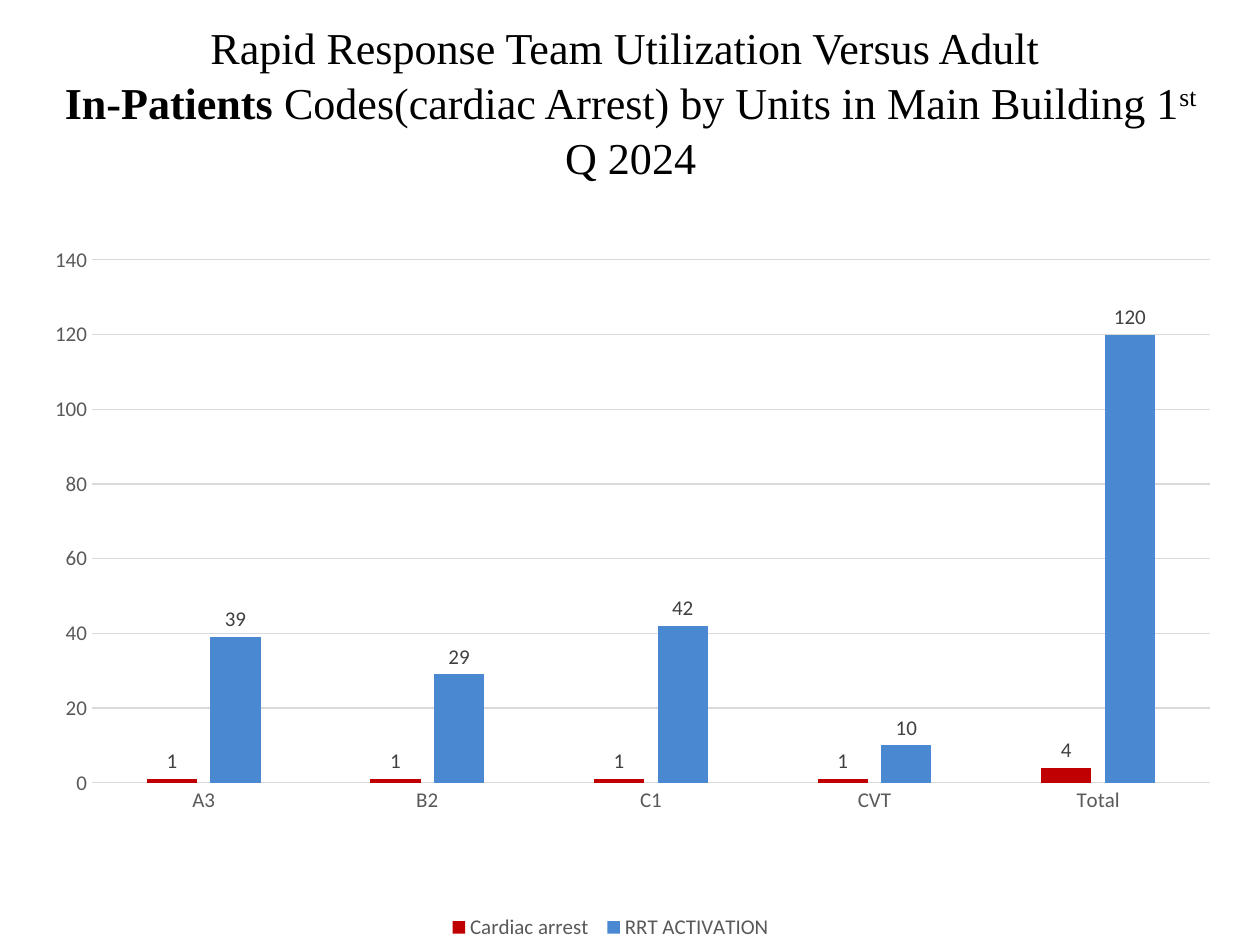
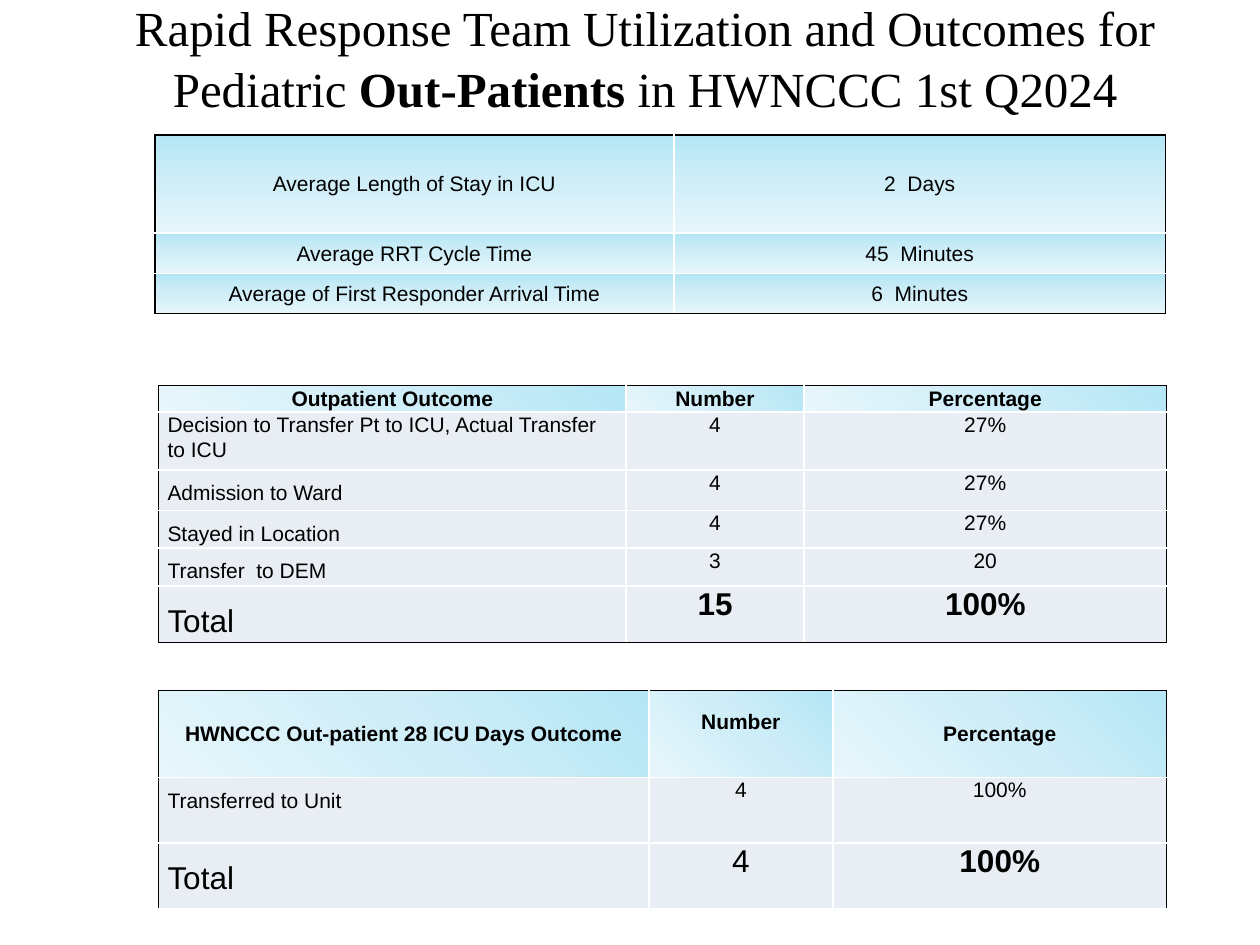
from lxml import etree
from pptx import Presentation
from pptx import util as u
from pptx.chart import data as chart_data
from pptx.dml.color import RGBColor
from pptx.enum import chart as ch
from pptx.enum import text as t
from pptx.oxml import ns

WIDTH, HEIGHT = u.Inches(10), u.Inches(7.5)
COLUMN, ROW = WIDTH / 100, HEIGHT / 75
BLACK, WHITE, PALE = "000000", "FFFFFF", "E9EDF4"
AXIS_TEXT, LABEL_TEXT, GRID_LINE = "595959", "404040", "D9D9D9"
ARREST_RED, ACTIVATION_BLUE = "C00000", "4A88D2"
SKY_STOPS = ((0, "B5E6F5"), (50, "D0EEF8"), (100, "E8F6FB"))
TITLE_FONT, TABLE_FONT, CHART_FONT = "Times New Roman", "Arial", "Calibri"


def rgb(value):
    return RGBColor.from_string(value)


def place(box):
    left, top, width, height = box
    return [u.Emu(round(n)) for n in
            (left * COLUMN, top * ROW, width * COLUMN, height * ROW)]


def set_font(font, face, size, color, bold=False):
    font.name, font.size, font.bold = face, u.Pt(size), bold
    font.color.rgb = rgb(color)


def add_element(parent, tag, **attributes):
    return etree.SubElement(parent, ns.qn(tag), attributes)


def add_color(parent, color):
    add_element(add_element(parent, "a:solidFill"), "a:srgbClr", val=color)


def add_title(slide, box, size, runs):
    frame = slide.shapes.add_textbox(*place(box)).text_frame
    frame.word_wrap = True
    frame.vertical_anchor = t.MSO_ANCHOR.MIDDLE
    paragraph = frame.paragraphs[0]
    paragraph.alignment = t.PP_ALIGN.CENTER
    paragraph.line_spacing = 1.04
    for words, style in runs:
        run = paragraph.add_run()
        run.text = words
        set_font(run.font, TITLE_FONT, size, BLACK, style == "bold")
        if style == "superscript":
            run.font._element.set("baseline", "30000")
        if style == "break":
            paragraph.add_line_break()


def set_plot_area(chart, x, y, w, h):
    plot_area = chart._chartSpace.chart.plotArea
    for old in plot_area.findall(ns.qn("c:layout")):
        plot_area.remove(old)
    layout = etree.Element(ns.qn("c:layout"))
    plot_area.insert(0, layout)
    manual = add_element(layout, "c:manualLayout")
    settings = {"layoutTarget": "inner", "xMode": "edge", "yMode": "edge",
                "x": x, "y": y, "w": w, "h": h}
    for name, value in settings.items():
        add_element(manual, f"c:{name}", val=str(value))


def style_axis(axis, line):
    axis.major_tick_mark = axis.minor_tick_mark = ch.XL_TICK_MARK.NONE
    set_font(axis.tick_labels.font, CHART_FONT, 12, AXIS_TEXT)
    if line:
        axis.format.line.color.rgb = rgb(line)
        axis.format.line.width = u.Pt(0.75)
    else:
        axis.format.line.fill.background()


def add_units_chart(slide, box, units, measures):
    data = chart_data.CategoryChartData()
    data.categories = units
    for name, values, _ in measures:
        data.add_series(name, values)
    chart = slide.shapes.add_chart(
        ch.XL_CHART_TYPE.COLUMN_CLUSTERED, *place(box), data).chart
    set_font(chart.font, CHART_FONT, 10, BLACK)
    chart.has_title = False
    chart.has_legend = True
    chart.legend.position = ch.XL_LEGEND_POSITION.BOTTOM
    chart.legend.include_in_layout = False
    set_font(chart.legend.font, CHART_FONT, 12, AXIS_TEXT)

    style_axis(chart.category_axis, GRID_LINE)
    scale = chart.value_axis
    style_axis(scale, None)
    scale.minimum_scale, scale.maximum_scale, scale.major_unit = 0, 140, 20
    scale.has_major_gridlines = True
    scale.major_gridlines.format.line.color.rgb = rgb(GRID_LINE)
    scale.major_gridlines.format.line.width = u.Pt(0.75)

    plot = chart.plots[0]
    plot.gap_width, plot.overlap, plot.vary_by_categories = 219, -27, False
    for series, (_, _, color) in zip(plot.series, measures):
        series.format.fill.solid()
        series.format.fill.fore_color.rgb = rgb(color)
        labels = series.data_labels
        labels.show_value = True
        labels.position = ch.XL_LABEL_POSITION.OUTSIDE_END
        set_font(labels.font, CHART_FONT, 12, LABEL_TEXT)
    set_plot_area(chart, 0.075, 0.036, 0.912, 0.736)


def paint_cell(cell, edges, angle):
    properties = cell._tc.get_or_add_tcPr()
    for side in "LRTB":
        line = add_element(properties, f"a:ln{side}", w=str(u.Pt(1)))
        add_color(line, BLACK if side in edges else WHITE)
    if angle is None:
        add_color(properties, PALE)
        return
    gradient = add_element(properties, "a:gradFill", rotWithShape="1")
    stops = add_element(gradient, "a:gsLst")
    for share, color in SKY_STOPS:
        stop = add_element(stops, "a:gs", pos=str(share * 1000))
        add_element(stop, "a:srgbClr", val=color)
    add_element(gradient, "a:lin", ang=str(angle * 60000), scaled="0")


def write_cell(cell, words, size=12, bold=False, label_spacing=None, middle=False):
    is_label = label_spacing is not None
    cell.margin_left = cell.margin_right = u.Inches(0.07 if is_label else 0.01)
    cell.margin_top = u.Inches(0 if is_label else 0.01)
    cell.margin_bottom = 0
    cell.vertical_anchor = t.MSO_ANCHOR.MIDDLE if middle else t.MSO_ANCHOR.TOP
    paragraph = cell.text_frame.paragraphs[0]
    paragraph.alignment = t.PP_ALIGN.LEFT if is_label else t.PP_ALIGN.CENTER
    if is_label:
        paragraph.line_spacing = label_spacing
    run = paragraph.add_run()
    run.text = words
    set_font(run.font, TABLE_FONT, size, BLACK, bold)


def add_grid(slide, corner, widths, heights, closed=True):
    box = (*corner, sum(widths), sum(heights))
    table = slide.shapes.add_table(len(heights), len(widths), *place(box)).table
    table.first_row = table.horz_banding = False
    for column, width in zip(table.columns, widths):
        column.width = u.Emu(round(width * COLUMN))
    for row, height in zip(table.rows, heights):
        row.height = u.Emu(round(height * ROW))

    def edges(r, c):
        return "".join(side for side, outer in (
            ("L", c == 0), ("R", c == len(widths) - 1), ("T", r == 0),
            ("B", closed and r == len(heights) - 1)) if outer)

    return table, edges


def add_averages(slide, corner, widths, heights, averages):
    table, edges = add_grid(slide, corner, widths, heights)
    for r, average in enumerate(averages):
        for c, words in enumerate(average):
            cell = table.cell(r, c)
            write_cell(cell, words, middle=True)
            paint_cell(cell, edges(r, c), 90)


def add_outcomes(slide, corner, widths, heights, outcomes, bold_totals,
                 closed=True):
    table, edges = add_grid(slide, corner, widths, heights, closed)
    total = len(outcomes) - 1
    for r, outcome in enumerate(outcomes):
        for c, words in enumerate(outcome):
            cell = table.cell(r, c)
            if r == 0:
                write_cell(cell, words, bold=True, middle=True)
            else:
                spacing = 1.07 if len(words) > 40 else 1.5
                write_cell(cell, words, 18 if r == total else 12,
                           r == total and c in bold_totals,
                           spacing if c == 0 else None)
            paint_cell(cell, edges(r, c), 135 if r == 0 else None)
    return table


def build_units_slide(slide):
    add_title(slide, (2.8, 1.3, 94.5, 13.4), 25.2, (
        ("Rapid Response Team Utilization Versus Adult ", "break"),
        ("In-Patients ", "bold"),
        ("Codes(cardiac Arrest) by Units in Main Building 1", "plain"),
        ("st", "superscript"),
        (" Q 2024", "plain")))
    add_units_chart(slide, (0, 18.6, 97.3, 56.4),
                    ("A3", "B2", "C1", "CVT", "Total"), (
        ("Cardiac arrest ", (1, 1, 1, 1, 4), ARREST_RED),
        ("RRT ACTIVATION ", (39, 29, 42, 10, 120), ACTIVATION_BLUE)))


def build_outpatient_slide(slide):
    add_title(slide, (7.5, -1, 87.4, 11), 28, (
        ("Rapid Response Team Utilization and Outcomes for Pediatric ", "plain"),
        ("Out-Patients ", "bold"),
        ("in HWNCCC 1st Q2024", "plain")))
    add_averages(slide, (12.3, 10.7), (41.2, 39), (7.8, 3.2, 3.2), (
        ("Average Length of Stay in ICU", "2  Days"),
        ("Average RRT Cycle Time", "45  Minutes"),
        ("Average of First Responder Arrival Time", "6  Minutes")))
    add_outcomes(slide, (12.6, 30.6), (37.1, 14.1, 28.8),
                 (2.1, 4.6, 3.2, 3, 3, 4.4), (
        ("Outpatient Outcome", "Number", "Percentage"),
        ("Decision to Transfer Pt to ICU, Actual Transfer to ICU", "4", "27%"),
        ("Admission to Ward", "4", "27%"),
        ("Stayed in Location", "4", "27%"),
        ("Transfer  to DEM", "3", "20"),
        ("Total", "15", "100%")), bold_totals=(1, 2))
    icu_days = add_outcomes(slide, (12.6, 54.8), (38.9, 14.6, 26.5),
                            (6.9, 5.2, 5.2), (
        ("HWNCCC Out-patient 28 ICU Days Outcome", "Number", "Percentage"),
        ("Transferred to Unit", "4", "100%"),
        ("Total", "4", "100%")), bold_totals=(2,), closed=False)
    icu_days.cell(0, 1).margin_bottom = u.Inches(0.19)


def main():
    deck = Presentation()
    deck.slide_width, deck.slide_height = WIDTH, HEIGHT
    for build in (build_units_slide, build_outpatient_slide):
        build(deck.slides.add_slide(deck.slide_layouts[6]))
    deck.save("out.pptx")


if __name__ == "__main__":
    main()
